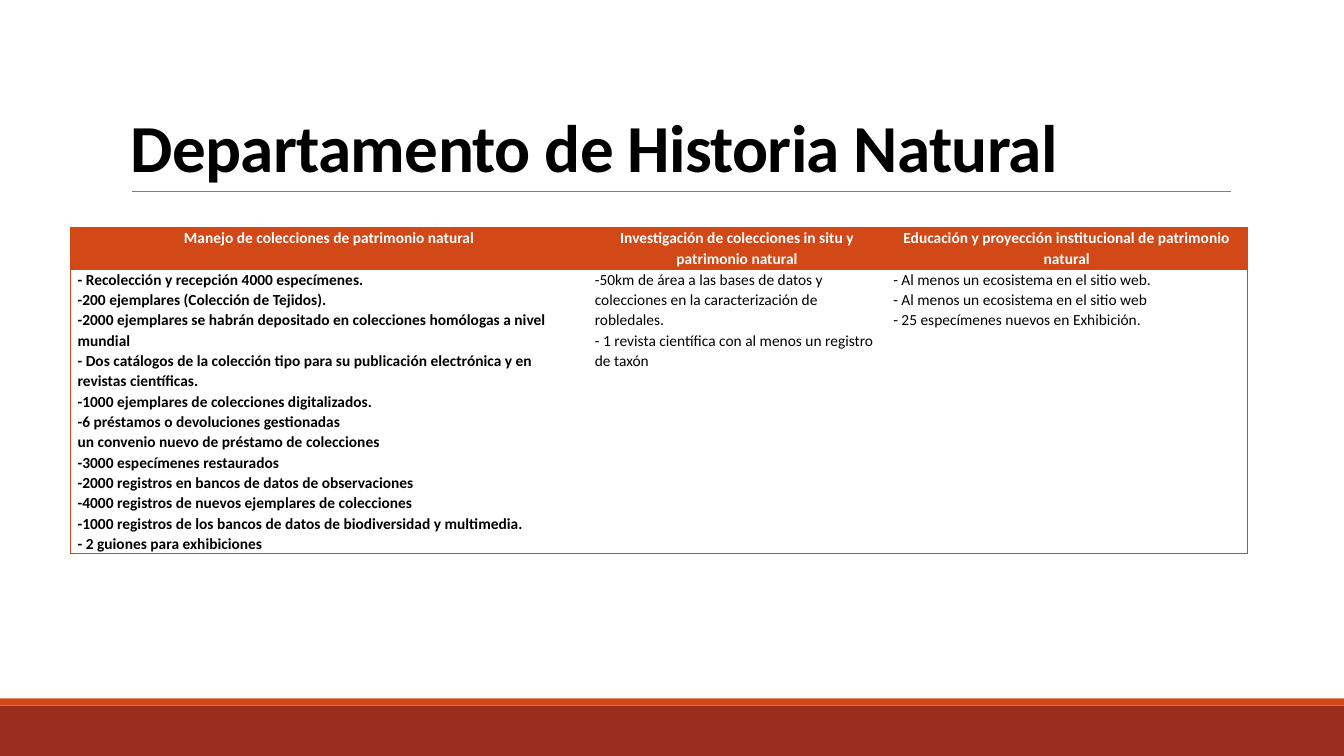
from dataclasses import dataclass

from lxml.etree import SubElement as Sub
from pptx import Presentation
from pptx.dml.color import RGBColor as Rgb
from pptx.enum.shapes import MSO_CONNECTOR as Conn, MSO_SHAPE as Kind
from pptx.enum.text import MSO_ANCHOR as Anchor, PP_ALIGN as Align
from pptx.oxml.ns import qn
from pptx.util import Inches, Pt

FONT = "Calibri"
HUES = {
    "dark": "9B2D1F",
    "accent": "D34817",
    "rule": "808080",
    "ink": "000000",
    "paper": "FFFFFF",
}


@dataclass
class Band:
    top: float
    high: float
    hue: str


@dataclass
class Column:
    wide: float
    head: str
    items: list[str]
    bold: bool = False


BANDS = [Band(7, 0.5, "dark"), Band(6.93, 0.07, "accent")]
COLUMNS = [
    Column(5.13, "Manejo de colecciones de patrimonio natural", [
        "- Recolección y recepción 4000 especímenes.",
        "-200 ejemplares (Colección de Tejidos).",
        "-2000 ejemplares se habrán depositado en colecciones homólogas a nivel mundial",
        "- Dos catálogos de la colección tipo para su publicación electrónica y en "
        "revistas científicas.",
        "-1000 ejemplares de colecciones digitalizados.",
        "-6 préstamos o devoluciones gestionadas",
        "un convenio nuevo de préstamo de colecciones",
        "-3000 especímenes restaurados",
        "-2000 registros en bancos de datos de observaciones",
        "-4000 registros de nuevos ejemplares de colecciones",
        "-1000 registros de los bancos de datos de biodiversidad y multimedia.",
        "- 2 guiones para exhibiciones",
    ], bold=True),
    Column(2.96, "Investigación de colecciones in situ y patrimonio natural", [
        "-50km de área a las bases de datos y colecciones en la caracterización de "
        "robledales.",
        "- 1 revista científica con al menos un registro de taxón",
    ]),
    Column(3.58, "Educación y proyección institucional de patrimonio natural", [
        "- Al menos un ecosistema en el sitio web.",
        "- Al menos un ecosistema en el sitio web",
        "- 25 especímenes nuevos en Exhibición.",
    ]),
]
ROWS = [0.41, 2.82]


def color(hue: str) -> Rgb:
    return Rgb.from_string(HUES[hue])


def add_run(para, text: str, size: float, hue: str, bold: bool):
    run = para.add_run()
    run.text = text
    font = run.font
    font.name, font.size, font.bold = FONT, Pt(size), bold
    font.color.rgb = color(hue)
    return run


def add_band(slide, band: Band) -> None:
    shape = slide.shapes.add_shape(
        Kind.RECTANGLE, 0, Inches(band.top), Inches(13.33), Inches(band.high))
    shape.shadow.inherit = False
    shape.fill.solid()
    shape.fill.fore_color.rgb = color(band.hue)
    shape.line.fill.background()


def add_rule(slide) -> None:
    y = Inches(1.9)
    rule = slide.shapes.add_connector(
        Conn.STRAIGHT, Inches(1.31), y, Inches(12.21), y)
    rule.line.color.rgb = color("rule")
    rule.line.width = Pt(0.5)
    Sub(rule._element.spPr, qn("a:effectLst"))


def add_title(slide) -> None:
    box = slide.shapes.add_textbox(
        Inches(1.2), Inches(0.31), Inches(11), Inches(1.59))
    frame = box.text_frame
    frame.word_wrap = True
    frame.vertical_anchor = Anchor.BOTTOM
    para = frame.paragraphs[0]
    para.alignment = Align.JUSTIFY
    para.line_spacing = 0.85
    run = add_run(para, "Departamento de Historia Natural ", 48, "ink", True)
    run._r.get_or_add_rPr().set("spc", "-50")


def set_edges(cell, drawn: dict[str, bool]) -> None:
    props = cell._tc.get_or_add_tcPr()
    for side, shown in drawn.items():
        line = Sub(props, qn(f"a:ln{side}"), w=str(Pt(1)))
        if shown:
            fill = Sub(line, qn("a:solidFill"))
            Sub(fill, qn("a:srgbClr"), val=HUES["accent"])
        else:
            Sub(line, qn("a:noFill"))


def fill_cell(cell, lines: list[str], head: bool, bold: bool) -> None:
    cell.margin_left = cell.margin_right = Inches(0.07)
    cell.margin_top = cell.margin_bottom = 0
    if head:
        cell.fill.solid()
        cell.fill.fore_color.rgb = color("accent")
    else:
        cell.fill.background()
    frame = cell.text_frame
    for i, text in enumerate(lines):
        para = frame.add_paragraph() if i else frame.paragraphs[0]
        para.alignment = Align.CENTER if head else Align.LEFT
        para.line_spacing = 1.07
        add_run(para, text, 11, "paper" if head else "ink", bold)


def add_goals(slide) -> None:
    wide = sum(col.wide for col in COLUMNS)
    table = slide.shapes.add_table(
        len(ROWS), len(COLUMNS), Inches(0.7), Inches(2.26),
        Inches(wide), Inches(sum(ROWS))).table
    table.first_row = table.horz_banding = False
    for row, high in zip(table.rows, ROWS):
        row.height = Inches(high)
    for c, col in enumerate(COLUMNS):
        table.columns[c].width = Inches(col.wide)
        for r, lines in enumerate([[col.head], col.items]):
            head = r == 0
            cell = table.cell(r, c)
            set_edges(cell, {
                "L": c == 0, "R": c == len(COLUMNS) - 1,
                "T": True, "B": not head,
            })
            fill_cell(cell, lines, head, head or col.bold)


def main() -> None:
    deck = Presentation()
    deck.slide_width, deck.slide_height = Inches(13.33), Inches(7.5)
    slide = deck.slides.add_slide(deck.slide_layouts[6])
    # Footer bands and title rule
    for band in BANDS:
        add_band(slide, band)
    add_rule(slide)
    # Title and table of goals
    add_title(slide)
    add_goals(slide)
    deck.save("out.pptx")


if __name__ == "__main__":
    main()
